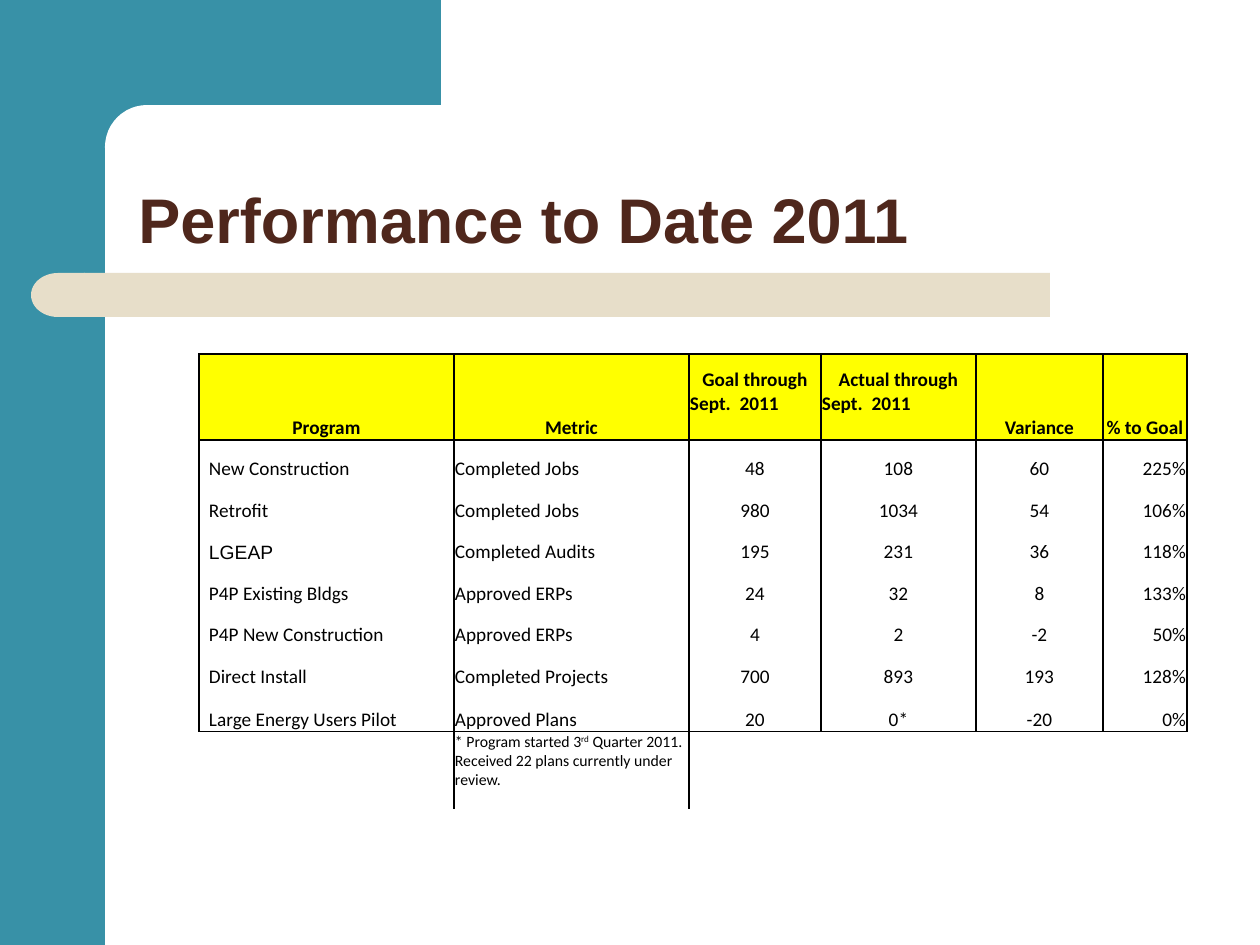
import dataclasses

import lxml.etree
import pptx
import pptx.dml.color
import pptx.enum.shapes
import pptx.enum.text
import pptx.oxml.ns
import pptx.util

PX_PER_INCH = 126
SHAPE = pptx.enum.shapes.MSO_SHAPE
ANCHOR = pptx.enum.text.MSO_ANCHOR
ALIGN = pptx.enum.text.PP_ALIGN


@dataclasses.dataclass(frozen=True)
class Theme:
    teal: str = "3891A7"
    sand: str = "E7DEC9"
    white: str = "FFFFFF"
    brown: str = "4F271C"
    yellow: str = "FFFF00"
    black: str = "000000"
    heading_font: str = "Arial"
    table_font: str = "Calibri"
    title_size: int = 36
    table_size: int = 11
    note_size: int = 9
    border_width: int = 1


THEME = Theme()

BACKDROP = [
    (SHAPE.RECTANGLE, (0, 0, 105, 945), THEME.teal, None),
    (SHAPE.RECTANGLE, (95, 0, 346, 147), THEME.teal, None),
    (SHAPE.ROUNDED_RECTANGLE, (105, 105, 703, 84), THEME.white, 0.5),
    (SHAPE.ROUNDED_RECTANGLE, (84, 273, 966, 44), THEME.sand, 0),
]

TABLE_LEFT, TABLE_TOP = 199, 354
COLUMN_WIDTHS = [255, 235, 132, 155, 127, 84]
ROW_HEIGHTS = [86] + [41, 42] * 3 + [43, 77]
NOTE_ROW = len(ROW_HEIGHTS) - 1
NOTE_COLUMN = 1
CELL_INSET = 1
PROGRAM_INDENT = 10
HEADER_LIFT = 24

HEADERS = [
    ["Program"],
    ["Metric"],
    ["Goal through", "Sept.  2011"],
    ["Actual through", "Sept.  2011"],
    ["Variance"],
    ["% to Goal"],
]
PROGRAMS = [
    ("New Construction", "Completed Jobs", "48", "108", "60", "225%"),
    ("Retrofit", "Completed Jobs", "980", "1034", "54", "106%"),
    ("LGEAP", "Completed Audits", "195", "231", "36", "118%"),
    ("P4P Existing Bldgs", "Approved ERPs", "24", "32", "8", "133%"),
    ("P4P New Construction", "Approved ERPs", "4", "2", "-2", "50%"),
    ("Direct Install", "Completed Projects", "700", "893", "193", "128%"),
    ("Large Energy Users Pilot", "Approved Plans", "20", "0*", "-20", "0%"),
]
BODY_ALIGNMENTS = [ALIGN.LEFT] * 2 + [ALIGN.CENTER] * 3 + [ALIGN.RIGHT]
NOTE = [
    ("* Program started 3", False),
    ("rd", True),
    (" Quarter 2011.  Received 22 plans currently under review.", False),
]


def px(length):
    return pptx.util.Emu(round(length * 914400 / PX_PER_INCH))


def rgb(value):
    return pptx.dml.color.RGBColor.from_string(value)


def set_values(target, values):
    for name, value in values.items():
        setattr(target, name, value)


def add_span(para, text, size, color=THEME.black, font=THEME.table_font, bold=False):
    span = para.add_run()
    span.text = text
    set_values(span.font, {"name": font, "size": pptx.util.Pt(size), "bold": bold})
    span.font.color.rgb = rgb(color)
    return span


def add_block(page, kind, place, color, corner=None):
    block = page.shapes.add_shape(kind, *map(px, place))
    block.shadow.inherit = False
    block.fill.solid()
    block.fill.fore_color.rgb = rgb(color)
    block.line.fill.background()
    if corner is not None:
        block.adjustments[0] = corner
    return block


def add_title(page, text):
    box = page.shapes.add_textbox(*map(px, (126, 105, 1102, 158)))
    set_values(box.text_frame, {"word_wrap": True, "vertical_anchor": ANCHOR.BOTTOM})
    para = box.text_frame.paragraphs[0]
    para.line_spacing = 0.9
    add_span(para, text, THEME.title_size, THEME.brown, THEME.heading_font, True)


def set_border(cell, side, visible):
    line = lxml.etree.SubElement(
        cell._tc.get_or_add_tcPr(), pptx.oxml.ns.qn(f"a:ln{side}"),
        w=str(pptx.util.Pt(THEME.border_width)),
    )
    if not visible:
        lxml.etree.SubElement(line, pptx.oxml.ns.qn("a:noFill"))
        return
    fill = lxml.etree.SubElement(line, pptx.oxml.ns.qn("a:solidFill"))
    lxml.etree.SubElement(fill, pptx.oxml.ns.qn("a:srgbClr"), val=THEME.black)


def format_cell(cell, row, column):
    """Rule the header, the body's columns and the sides of the note."""
    ruled_rows = (0, 1, NOTE_ROW)
    note_edges = (NOTE_COLUMN, NOTE_COLUMN + 1)
    for side, edge in (("L", column), ("R", column + 1)):
        set_border(cell, side, row < NOTE_ROW or edge in note_edges)
    for side, edge in (("T", row), ("B", row + 1)):
        set_border(cell, side, edge in ruled_rows)
    if row == 0:
        cell.fill.solid()
        cell.fill.fore_color.rgb = rgb(THEME.yellow)
    else:
        cell.fill.background()
    set_values(cell, {
        "vertical_anchor": ANCHOR.TOP if row == NOTE_ROW else ANCHOR.BOTTOM,
        "margin_left": px(CELL_INSET),
        "margin_right": px(CELL_INSET),
        "margin_top": px(CELL_INSET),
        "margin_bottom": 0,
    })


def fill_header(cell, lines):
    """Centre the first line; a second one stands left, above the row's foot."""
    for index, text in enumerate(lines):
        frame = cell.text_frame
        para = frame.add_paragraph() if index else frame.paragraphs[0]
        para.alignment = ALIGN.LEFT if index else ALIGN.CENTER
        add_span(para, text, THEME.table_size, bold=True)
    if len(lines) > 1:
        cell.margin_bottom = px(HEADER_LIFT)


def fill_body(cell, text, column):
    para = cell.text_frame.paragraphs[0]
    para.alignment = BODY_ALIGNMENTS[column]
    font = THEME.heading_font if text == "LGEAP" else THEME.table_font
    add_span(para, text, THEME.table_size, font=font)
    if column == 0:
        cell.margin_left = px(PROGRAM_INDENT)


def fill_note(cell):
    para = cell.text_frame.paragraphs[0]
    for text, raised in NOTE:
        span = add_span(para, text, THEME.note_size)
        if raised:
            span.font._element.set("baseline", "30000")


def add_performance_table(page):
    place = (TABLE_LEFT, TABLE_TOP, sum(COLUMN_WIDTHS), sum(ROW_HEIGHTS))
    table = page.shapes.add_table(
        len(ROW_HEIGHTS), len(COLUMN_WIDTHS), *map(px, place)
    ).table
    set_values(table, {"first_row": False, "horz_banding": False})
    for column, width in zip(table.columns, COLUMN_WIDTHS):
        column.width = px(width)
    for row, height in enumerate(ROW_HEIGHTS):
        table.rows[row].height = px(height)
        for column in range(len(COLUMN_WIDTHS)):
            format_cell(table.cell(row, column), row, column)
    for column, lines in enumerate(HEADERS):
        fill_header(table.cell(0, column), lines)
    for row, values in enumerate(PROGRAMS, start=1):
        for column, text in enumerate(values):
            fill_body(table.cell(row, column), text, column)
    fill_note(table.cell(NOTE_ROW, NOTE_COLUMN))


def main():
    deck = pptx.Presentation()
    set_values(deck, {"slide_width": px(1260), "slide_height": px(945)})
    page = deck.slides.add_slide(deck.slide_layouts[6])
    for kind, place, color, corner in BACKDROP:
        add_block(page, kind, place, color, corner)
    bar_end = add_block(page, SHAPE.FLOWCHART_DELAY, (31, 273, 54, 44), THEME.sand)
    bar_end.rotation = 180
    add_title(page, "Performance to Date 2011")
    add_performance_table(page)
    deck.save("out.pptx")


if __name__ == "__main__":
    main()
